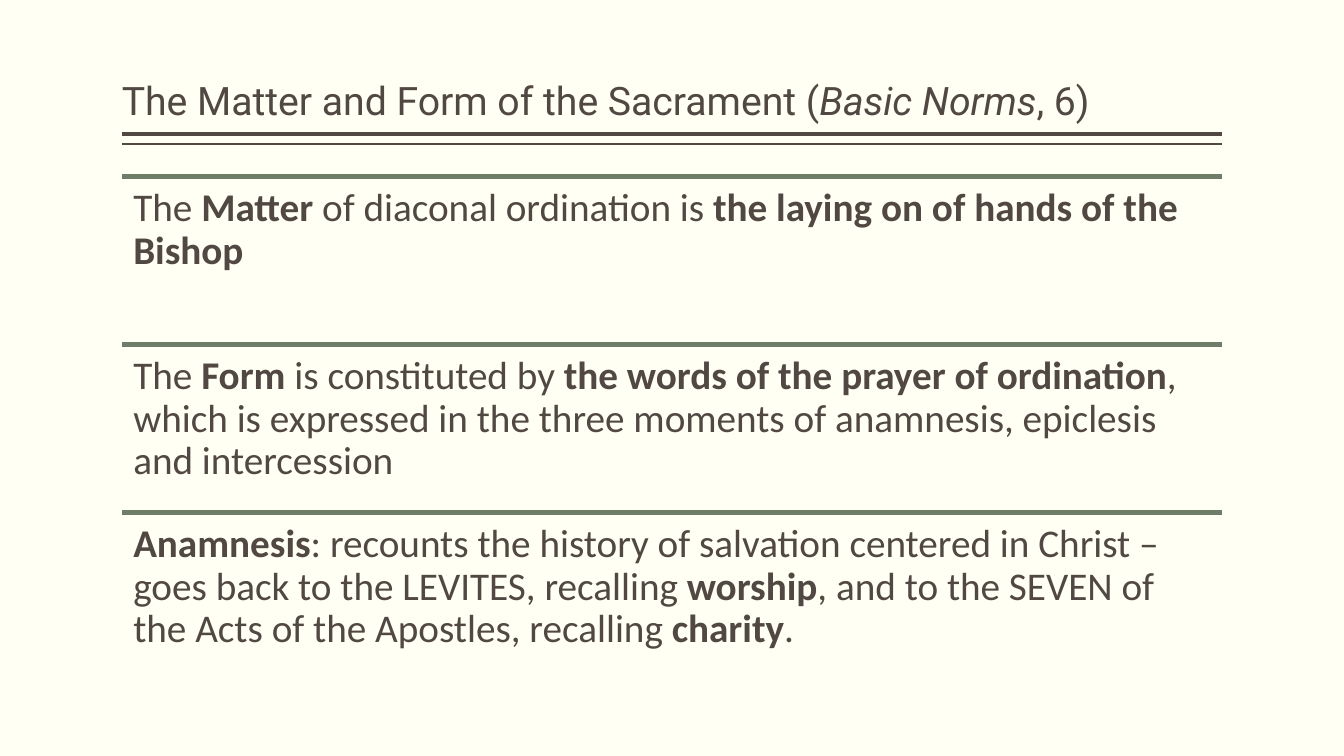
from dataclasses import dataclass

from lxml import etree
from pptx import Presentation
from pptx.dml.color import RGBColor
from pptx.enum.shapes import MSO_CONNECTOR
from pptx.enum.text import MSO_ANCHOR
from pptx.oxml.ns import qn
from pptx.util import Pt

PX = 9525  # EMU in one px, 96 px to the inch
STRAIGHT = MSO_CONNECTOR.STRAIGHT
TOP, BOTTOM = MSO_ANCHOR.TOP, MSO_ANCHOR.BOTTOM


@dataclass(frozen=True)
class Theme:
    paper: RGBColor = RGBColor(0xFF, 0xFF, 0xF3)
    ink: RGBColor = RGBColor(0x51, 0x48, 0x43)
    sage: RGBColor = RGBColor(0x6D, 0x7D, 0x66)
    title_font: str = "Roboto"
    body_font: str = "Calibri"
    size: int = 28
    line_spacing: float = 0.9
    space_after: int = 10


THEME = Theme()

TITLE = [("The Matter and Form of the Sacrament (", ""),
         ("Basic Norms", "italic"), (", 6)", "")]

STATEMENTS = [
    [("The ", ""), ("Matter", "bold"), (" of diaconal ordination is ", ""),
     ("the laying on of hands of the Bishop", "bold")],
    [("The ", ""), ("Form ", "bold"), ("is constituted by ", ""),
     ("the words of the prayer of ordination", "bold"),
     (", which is expressed in the three moments of anamnesis, "
      "epiclesis and intercession", "")],
    [("Anamnesis", "bold"),
     (": recounts the history of salvation centered in Christ – "
      "goes back to the LEVITES, recalling ", ""),
     ("worship", "bold"),
     (", and to the SEVEN of the Acts of the Apostles, recalling ", ""),
     ("charity", "bold"), (".", "")],
]


def add_rule(page, left, top, width, color, weight):
    """Draw a horizontal line without a shadow."""
    rule = page.shapes.add_connector(
        STRAIGHT, left * PX, top * PX, (left + width) * PX, top * PX)
    rule.line.color.rgb = color
    rule.line.width = Pt(weight)
    etree.SubElement(rule._element.spPr, qn("a:effectLst"))


def add_text(page, spans, left, top, width, height, font,
             anchor=TOP, side_inset=0, end_inset=0, space_after=0):
    """Add one paragraph made of (text, style) spans."""
    box = page.shapes.add_textbox(
        left * PX, top * PX, width * PX, height * PX)
    frame = box.text_frame
    frame.word_wrap = True
    frame.vertical_anchor = anchor
    frame.margin_left = frame.margin_right = side_inset * PX
    frame.margin_top = frame.margin_bottom = end_inset * PX
    para = frame.paragraphs[0]
    para.line_spacing = THEME.line_spacing
    para.space_after = Pt(space_after)
    for text, style in spans:
        span = para.add_run()
        span.text = text
        span.font.name = font
        span.font.size = Pt(THEME.size)
        span.font.color.rgb = THEME.ink
        span.font.bold = style == "bold"
        span.font.italic = style == "italic"


def add_heading(page, left, top, width, height):
    """Place the title at the foot of its box, with a double rule below."""
    add_text(page, TITLE, left, top, width, height, THEME.title_font,
             anchor=BOTTOM, end_inset=5)
    for gap, weight in ((5, 3), (14, 1)):
        add_rule(page, left, top + height + gap, width, THEME.ink, weight)


def add_statements(page, left, top, width, height):
    """Stack the statements in equal rows, each under a rule."""
    row_height = height // len(STATEMENTS)
    for index, spans in enumerate(STATEMENTS):
        row_top = top + index * row_height
        add_rule(page, left, row_top, width, THEME.sage, 3.78)
        add_text(page, spans, left, row_top, width, row_height,
                 THEME.body_font, side_inset=11, end_inset=11,
                 space_after=THEME.space_after)


def main():
    deck = Presentation()
    deck.slide_width, deck.slide_height = 1280 * PX, 720 * PX
    page = deck.slides.add_slide(deck.slide_layouts[6])
    page.background.fill.solid()
    page.background.fill.fore_color.rgb = THEME.paper
    add_heading(page, 116, 8, 1048, 115)
    add_statements(page, 116, 168, 1048, 480)
    deck.save("out.pptx")


if __name__ == "__main__":
    main()
